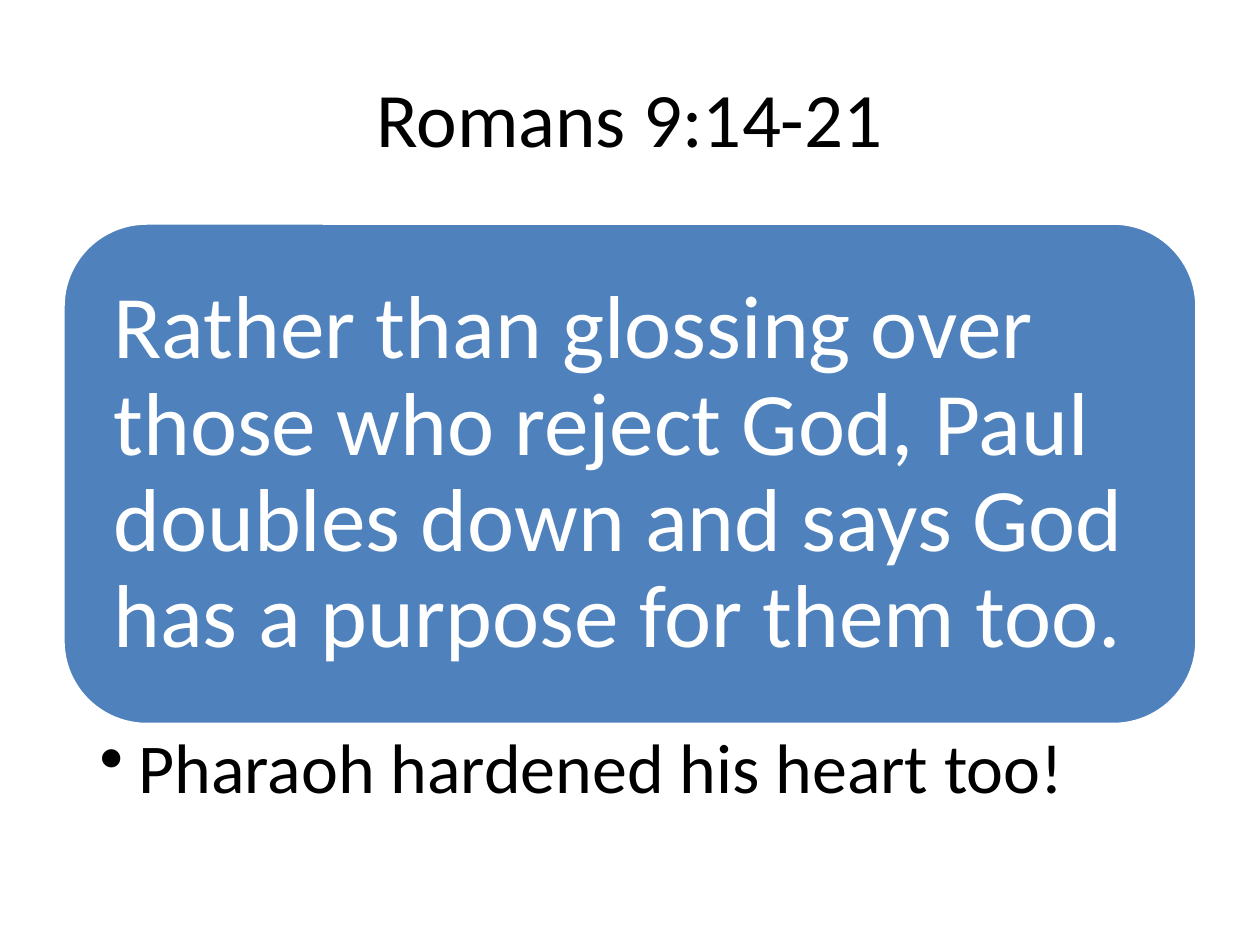
from dataclasses import dataclass

from lxml import etree
from pptx import Presentation
from pptx.dml.color import RGBColor
from pptx.enum.shapes import MSO_SHAPE
from pptx.enum.text import MSO_ANCHOR, PP_ALIGN
from pptx.oxml.ns import qn
from pptx.slide import Slide
from pptx.text.text import _Paragraph
from pptx.util import Inches, Pt

BLACK = RGBColor(0x00, 0x00, 0x00)
WHITE = RGBColor(0xFF, 0xFF, 0xFF)
BLUE = RGBColor(0x4F, 0x81, 0xBD)
ROUND = MSO_SHAPE.ROUNDED_RECTANGLE
TOP, MIDDLE = MSO_ANCHOR.TOP, MSO_ANCHOR.MIDDLE
LEFT, CENTER = PP_ALIGN.LEFT, PP_ALIGN.CENTER
FONT = "Calibri"

Box = tuple[float, float, float, float]


@dataclass
class Label:
    text: str
    box: Box
    size: float
    color: RGBColor = BLACK
    anchor: MSO_ANCHOR = MIDDLE
    align: PP_ALIGN = LEFT
    insets: Box = (0.1, 0.05, 0.1, 0.05)
    spacing: float = 0.9
    bullet: bool = False


LABELS = [
    Label("Romans 9:14-21", (0.5, 0.3, 9, 1.25), 44, align=CENTER, spacing=1),
    Label("Rather than glossing over those who reject God, Paul doubles down "
          "and says God has a purpose for them too.",
          (0.69, 1.97, 8.61, 3.59), 51, WHITE, insets=(0.21,) * 4),
    Label("Pharaoh hardened his heart too!", (0.5, 5.75, 9, 0.92), 40,
          anchor=TOP, insets=(0.29, 0.07, 0.4, 0.07), bullet=True),
]


def add_bullet(para: _Paragraph) -> None:
    """Make the paragraph a second-level bullet with a hanging indent."""
    para.level = 1
    props = para._p.get_or_add_pPr()
    props.set("marL", str(Inches(0.31)))
    props.set("indent", str(-Inches(0.31)))
    etree.SubElement(props, qn("a:buChar")).set("char", "•")


def add_label(slide: Slide, label: Label) -> None:
    frame = slide.shapes.add_textbox(*map(Inches, label.box)).text_frame
    frame.word_wrap = True
    frame.vertical_anchor = label.anchor
    (frame.margin_left, frame.margin_top,
     frame.margin_right, frame.margin_bottom) = map(Inches, label.insets)
    frame.text = label.text
    para = frame.paragraphs[0]
    para.alignment = label.align
    para.line_spacing = label.spacing
    if label.bullet:
        add_bullet(para)
    font = para.runs[0].font
    font.name = FONT
    font.size = Pt(label.size)
    font.color.rgb = label.color


def add_panel(slide: Slide, box: Box) -> None:
    panel = slide.shapes.add_shape(ROUND, *map(Inches, box))
    panel.shadow.inherit = False
    panel.fill.solid()
    panel.fill.fore_color.rgb = BLUE
    panel.line.color.rgb = WHITE
    panel.line.width = Pt(2)


def main() -> None:
    deck = Presentation()
    deck.slide_width, deck.slide_height = Inches(10), Inches(7.5)
    slide = deck.slides.add_slide(deck.slide_layouts[6])
    add_panel(slide, (0.5, 1.77, 9, 3.98))
    for label in LABELS:
        add_label(slide, label)
    deck.save("out.pptx")


if __name__ == "__main__":
    main()
